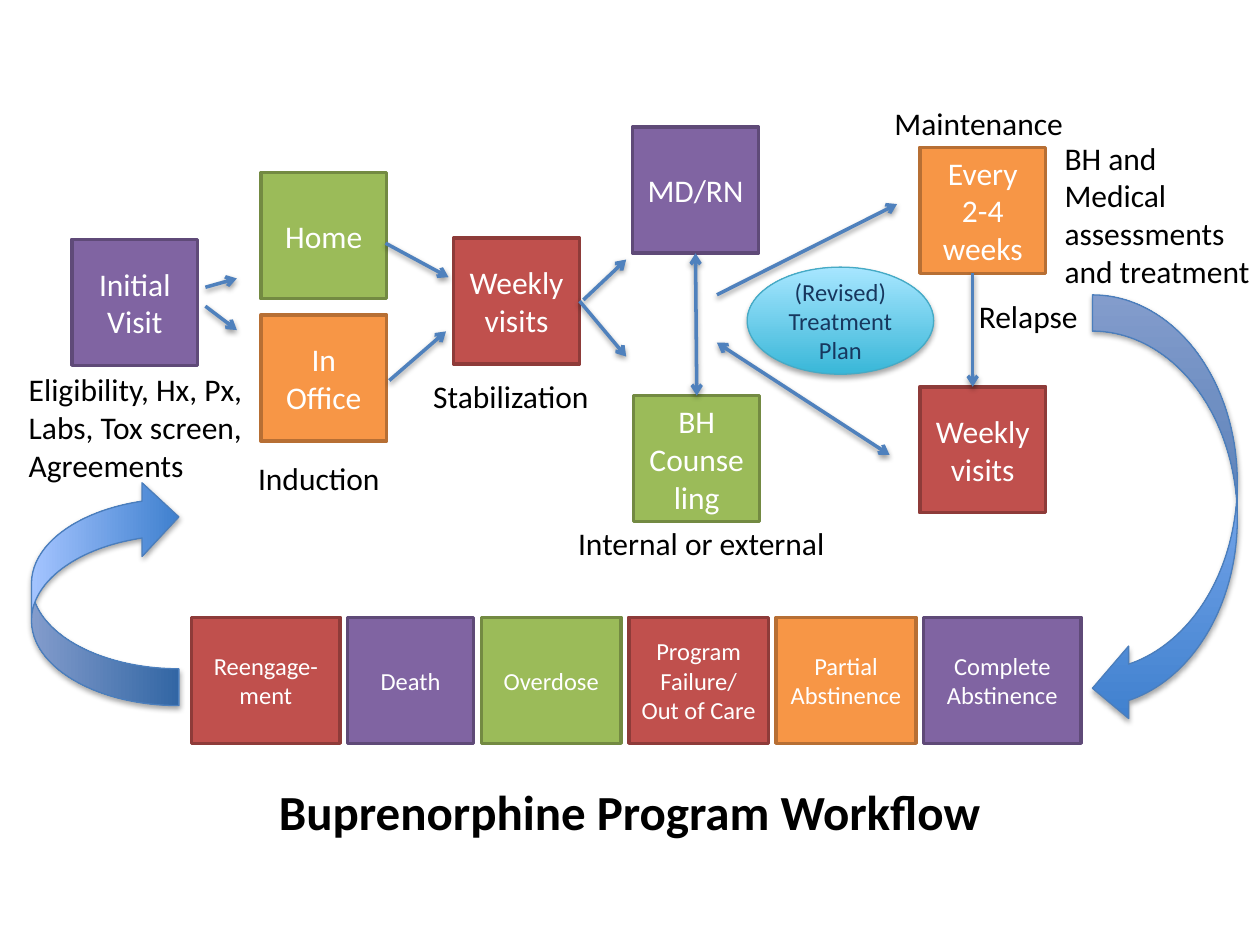
from pptx import Presentation
from pptx.dml.color import RGBColor
from pptx.enum.shapes import MSO_CONNECTOR, MSO_SHAPE as SHAPE
from pptx.enum.text import MSO_ANCHOR as ANCHOR, PP_ALIGN as ALIGN
from pptx.oxml import parse_xml
from pptx.oxml.ns import nsdecls
from pptx.util import Emu, Pt

SCALE = 9144
UNIT = 100
PURPLE = ("8064A2", "5F4A78")
RED = ("C0504D", "8E3B39")
GREEN = ("9BBB59", "738A42")
ORANGE = ("F79646", "B76F34")
BLUE_GRADIENT = ("3F80CE", "A4C4FF")
CYAN_GRADIENT = ("39B7D8", "A7E6FF")


def px(*lengths):
    return [Emu(length * SCALE) for length in lengths]


def paint(color_format, value):
    color_format.rgb = RGBColor.from_string(value)


def write_text(shape, text, size=18, color="000000", bold=False,
               align=ALIGN.LEFT, anchor=ANCHOR.TOP):
    frame = shape.text_frame
    frame.word_wrap = True
    frame.vertical_anchor = anchor
    frame.text = text
    for paragraph in frame.paragraphs:
        paragraph.alignment = align
        font = paragraph.font
        font.name, font.size, font.bold = "Calibri", Pt(size), bold
        paint(font.color, color)


def add_shadow(shape, opacity, distance):
    shape.element.spPr.append(parse_xml(
        f'<a:effectLst {nsdecls("a")}><a:outerShdw blurRad="40000" dist="{distance}" '
        f'dir="5400000" rotWithShape="0"><a:srgbClr val="000000">'
        f'<a:alpha val="{opacity}000"/></a:srgbClr></a:outerShdw></a:effectLst>'))


def add_step(slide, left, top, text, colors, width=UNIT, size=18):
    shape = slide.shapes.add_shape(SHAPE.RECTANGLE, *px(left, top, width, UNIT))
    shape.shadow.inherit = False
    shape.fill.solid()
    paint(shape.fill.fore_color, colors[0])
    paint(shape.line.color, colors[1])
    shape.line.width = Pt(2)
    write_text(shape, text, size, "FFFFFF", align=ALIGN.CENTER, anchor=ANCHOR.MIDDLE)


def add_label(slide, left, top, width, height, text, **text_format):
    label = slide.shapes.add_textbox(*px(left, top, width, height))
    write_text(label, text, **text_format)
    return label


def add_arrow(slide, start_x, start_y, end_x, end_y, ends=("tailEnd",)):
    arrow = slide.shapes.add_connector(
        MSO_CONNECTOR.STRAIGHT, *px(start_x, start_y, end_x, end_y))
    paint(arrow.line.color, "4F81BD")
    arrow.line.width = Pt(2)
    for end in ends:
        arrow.element.spPr.get_or_add_ln().append(
            parse_xml(f'<a:{end} {nsdecls("a")} type="arrow"/>'))
    add_shadow(arrow, 38, 20000)


def add_glossy(slide, kind, left, top, width, height, gradient, outline, rotation=0):
    shape = slide.shapes.add_shape(kind, *px(left, top, width, height))
    shape.rotation = rotation
    shape.fill.gradient()
    shape.fill.gradient_angle = 90
    for stop, color in zip(shape.fill.gradient_stops, gradient):
        paint(stop.color, color)
    paint(shape.line.color, outline)
    shape.line.width = Pt(0.75)
    add_shadow(shape, 35, 23000)
    return shape


def build_intake(slide, left, top):
    add_step(slide, left + 44, top + 53, "Initial Visit", PURPLE)
    add_step(slide, left + 194, top, "Home", GREEN)
    add_step(slide, left + 194, top + 113, "In Office", ORANGE)
    add_label(slide, left, top + 152, 193, 101,
              "Eligibility, Hx, Px, Labs, Tox screen, Agreements")
    add_label(slide, left + 182, top + 222, 137, 40, "Induction")
    for x1, y1, x2, y2 in ((150, 91, 175, 84), (150, 106, 175, 125),
                           (293, 56, 343, 83), (296, 165, 341, 126)):
        add_arrow(slide, left + x1, top + y1, left + x2, top + y2)


def build_stabilization(slide, left, top):
    add_step(slide, left + 26, top + 88, "Weekly visits", RED)
    add_step(slide, left + 168, top, "MD/RN", PURPLE)
    add_step(slide, left + 169, top + 213, "BH Counseling", GREEN)
    add_label(slide, left, top + 193, 163, 40, "Stabilization")
    add_label(slide, left + 115, top + 310, 224, 40, "Internal or external")
    add_arrow(slide, left + 129, top + 137, left + 163, top + 105)
    add_arrow(slide, left + 126, top + 138, left + 163, top + 182)
    add_arrow(slide, left + 218, top + 100, left + 219, top + 213, ("headEnd", "tailEnd"))


def build_maintenance(slide, left, top):
    add_step(slide, left + 161, top + 39, "Every 2-4 weeks", ORANGE)
    add_step(slide, left + 161, top + 229, "Weekly visits", RED)
    add_label(slide, left + 131, top, 158, 40, "Maintenance")
    add_label(slide, left + 266, top + 27, 178, 131,
              "BH and Medical assessments and treatment")
    add_label(slide, left + 198, top + 153, 108, 40, "Relapse")
    add_arrow(slide, left, top + 156, left + 143, top + 84)
    add_arrow(slide, left + 203, top + 139, left + 203, top + 229)
    add_arrow(slide, left, top + 194, left + 137, top + 283, ("headEnd", "tailEnd"))
    plan = add_glossy(slide, SHAPE.OVAL, left + 24, top + 134, 148, 85,
                      CYAN_GRADIENT, "46AAC5")
    write_text(plan, "(Revised)\nTreatment Plan", 14, "17375E",
               align=ALIGN.CENTER, anchor=ANCHOR.MIDDLE)


def build_outcomes(slide, left, top, gap=6):
    outcomes = (
        ("Reengage-ment", RED, 118),
        ("Death", PURPLE, 100),
        ("Overdose", GREEN, 111),
        ("Program Failure/ Out of Care", RED, 111),
        ("Partial Abstinence", ORANGE, 111),
        ("Complete Abstinence", PURPLE, 125),
    )
    for text, colors, width in outcomes:
        add_step(slide, left, top, text, colors, width, 14)
        left += width + gap


def build_cycle(slide, left, top):
    add_glossy(slide, SHAPE.CURVED_LEFT_ARROW, left + 873, top, 115, 341,
               BLUE_GRADIENT, "4B7EBC")
    add_glossy(slide, SHAPE.CURVED_DOWN_ARROW, left, top + 178, 179, 117,
               BLUE_GRADIENT, "4B7EBC", 270)


def build_title(slide, left, top, width, height):
    title = add_label(slide, left, top, width, height, "Buprenorphine Program Workflow",
                      size=28, bold=True, align=ALIGN.CENTER)
    title.fill.solid()
    paint(title.fill.fore_color, "FFFFFF")


def main():
    presentation = Presentation()
    presentation.slide_width, presentation.slide_height = px(1000, 750)
    slide = presentation.slides.add_slide(presentation.slide_layouts[6])
    build_intake(slide, 13, 137)
    build_stabilization(slide, 334, 101)
    build_maintenance(slide, 569, 78)
    build_outcomes(slide, 152, 490)
    build_cycle(slide, -6, 234)
    build_title(slide, 182, 615, 635, 57)
    presentation.save("out.pptx")


if __name__ == "__main__":
    main()
